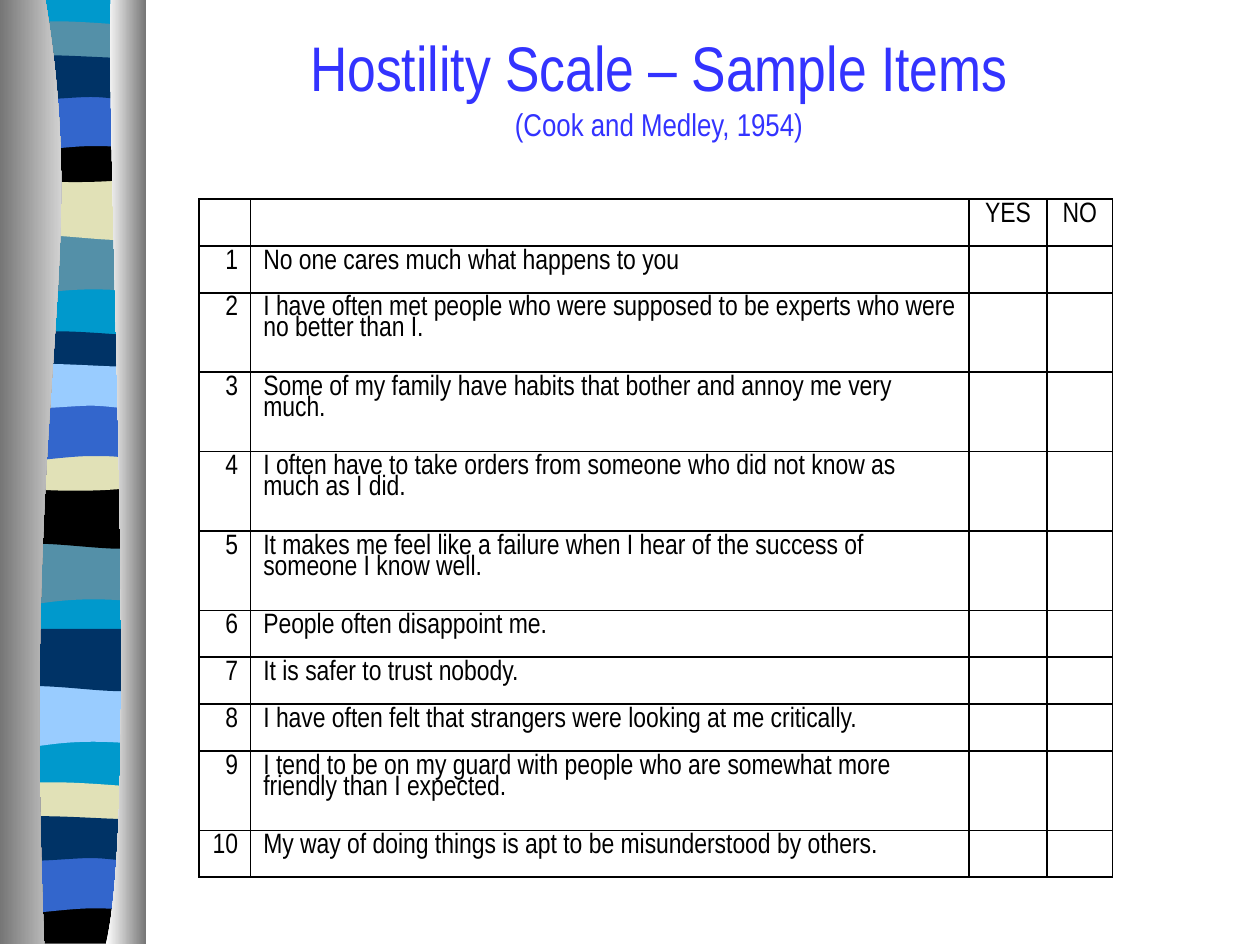
import pptx
import pptx.dml.color
import pptx.enum.text
import pptx.oxml
import pptx.oxml.ns
import pptx.util
from lxml import etree
from pptx.util import Inches

THEME = {
    "font": "Arial Narrow", "title": 36, "source": 18, "body": 16,
    "blue": "3333FF", "ink": "000000", "grey": "767676", "white": "FFFFFF",
    "aqua": "0099CC", "teal": "5490A8", "cream": "E1E1B7", "black": "000000",
    "royal": "3366CC", "navy": "003366", "sky": "99CCFF",
}

TITLE = [("Hostility Scale – Sample Items", "title"), ("(Cook and Medley, 1954)", "source")]
ITEMS = [
    "No one cares much what happens to you",
    "I have often met people who were supposed to be experts who were no better than I.",
    "Some of my family have habits that bother and annoy me very much.",
    "I often have to take orders from someone who did not know as much as I did.",
    "It makes me feel like a failure when I hear of the success of someone I know well.",
    "People often disappoint me.",
    "It is safer to trust nobody.",
    "I have often felt that strangers were looking at me critically.",
    "I tend to be on my guard with people who are somewhat more friendly than I expected.",
    "My way of doing things is apt to be misunderstood by others.",
]
ROWS = [("", "", "YES", "NO")] + [(str(n), item, "", "") for n, item in enumerate(ITEMS, 1)]
WIDTHS = [0.41, 5.7, 0.62, 0.52]
SHORT, TALL, WRAP = 0.37, 0.63, 64

LEFT, RIGHT = 0.05, 1.14
WAVES = {
    "base": [(RIGHT, 0), (RIGHT, 7.47), (LEFT, 7.47), (LEFT, 0)],
    "dip": [(RIGHT, 0), (RIGHT, .47), (.39, .39, .24, .55, LEFT, .47), (LEFT, 0)],
    "swell": [(RIGHT, 0), (RIGHT, .47), (.96, .55, .39, .41, LEFT, .47), (LEFT, 0)],
    "crest": [(RIGHT, 0), (RIGHT, .24), (.96, .29, .24, .29, LEFT, .24), (LEFT, 0),
              (.12, -.05, .29, -.04, .47, -.04), (.65, -.04, 1, -.01, RIGHT, 0)],
    "bowl": [(RIGHT, 0), (RIGHT, .32), (.96, .38, .24, .38, LEFT, .32), (LEFT, 0),
             (.72, .05, .91, 0, RIGHT, 0)],
    "foot": [(RIGHT, 0), (RIGHT, .37), (LEFT, .37), (LEFT, 0), (.72, .05, .91, 0, RIGHT, 0)],
    "arch": [(RIGHT, 0), (RIGHT, .47), (.97, .42, .9, .42, .72, .42),
             (.54, .42, .22, .47, LEFT, .47), (LEFT, 0)],
    "roll": [(RIGHT, 0), (RIGHT, .31), (1.07, .36, .9, .31, .72, .31),
             (.54, .31, .17, .36, LEFT, .31), (LEFT, 0),
             (.21, -.05, .79, 0, .97, 0), (1.15, 0, 1.1, 0, RIGHT, 0)],
}
BANDS = [
    ("base", 0, "aqua"),
    ("dip", 1.85, "teal"), ("swell", 1.41, "cream"), ("crest", 0.21, "teal"),
    ("bowl", 1.08, "black"), ("arch", 0.74, "royal"), ("roll", 0.46, "navy"),
    ("dip", 4.31, "teal"), ("swell", 3.86, "black"), ("crest", 2.67, "navy"),
    ("bowl", 3.53, "cream"), ("arch", 3.2, "royal"), ("roll", 2.91, "sky"),
    ("dip", 5.44, "sky"), ("swell", 4.99, "navy"), ("crest", 6.25, "cream"),
    ("foot", 7.12, "black"), ("arch", 6.79, "royal"), ("roll", 6.5, "navy"),
]
POSTS = [
    ([(.36, 0), (.72, 2.16, .17, 2.96, .35, 7.49), (0, 7.49), (0, 0)], ("grey", "white")),
    ([(.88, 0), (.84, 1.25, 1.11, 6.46, .84, 7.49), (1.16, 7.49), (1.16, 0)], ("white", "grey")),
]


def tint(name):
    return pptx.dml.color.RGBColor.from_string(THEME[name])


def draw(slide, parts, top=0):
    spots = [(Inches(x), Inches(y + top))
             for part in parts for x, y in zip(part[::2], part[1::2])]
    pen = slide.shapes.build_freeform(*spots[0])
    pen.add_line_segments(spots[1:], close=True)
    shape = pen.convert_to_shape()
    shape.shadow.inherit = False
    shape.line.fill.background()
    lines = iter(list(shape._element.iter(pptx.oxml.ns.qn("a:lnTo"))))
    for part in parts[1:]:
        line = next(lines)
        if len(part) == 6:
            curve = etree.Element(pptx.oxml.ns.qn("a:cubicBezTo"))
            line.addprevious(curve)
            for old in (line, next(lines), next(lines)):
                curve.append(old[0])
                old.getparent().remove(old)
    return shape


def add_side(slide):
    for wave, top, hue in BANDS:
        fill = draw(slide, WAVES[wave], top).fill
        fill.solid()
        fill.fore_color.rgb = tint(hue)
    for parts, hues in POSTS:
        fill = draw(slide, parts).fill
        fill.gradient()
        fill.gradient_angle = 0
        for stop, hue, place in zip(fill.gradient_stops, hues, (0, 1)):
            stop.color.rgb = tint(hue)
            stop.position = place


def write(para, text, size, hue, align):
    para.alignment = align
    run = para.add_run()
    run.text = text
    run.font.name = THEME["font"]
    run.font.size = pptx.util.Pt(THEME[size])
    run.font.color.rgb = tint(hue)


def add_title(slide):
    title = slide.shapes.title
    title.left, title.top, title.width, title.height = map(Inches, (1.52, 0.18, 7.42, 1))
    frame = title.text_frame
    frame.word_wrap = True
    frame.auto_size = pptx.enum.text.MSO_AUTO_SIZE.NONE
    frame.vertical_anchor = pptx.enum.text.MSO_ANCHOR.BOTTOM
    for n, (text, size) in enumerate(TITLE):
        para = frame.add_paragraph() if n else frame.paragraphs[0]
        para.space_before = pptx.util.Pt(0)
        write(para, text, size, "blue", pptx.enum.text.PP_ALIGN.CENTER)


def edge(cell, col):
    props = cell._tc.get_or_add_tcPr()
    for side in "LRTB":
        thin = (col, side) in ((0, "R"), (1, "L"))
        width = pptx.util.Pt(0.75 if thin else 1)
        props.append(pptx.oxml.parse_xml(
            f'<a:ln{side} {pptx.oxml.ns.nsdecls("a")} w="{width}"><a:solidFill>'
            f'<a:srgbClr val="{THEME["ink"]}"/></a:solidFill></a:ln{side}>'))
    cell.fill.background()


def add_grid(slide):
    highs = [TALL if len(row[1]) > WRAP else SHORT for row in ROWS]
    grid = slide.shapes.add_table(
        len(ROWS), len(WIDTHS), Inches(1.58), Inches(1.58),
        Inches(sum(WIDTHS)), Inches(sum(highs))).table
    grid.first_row = grid.horz_banding = False
    for col, width in zip(grid.columns, WIDTHS):
        col.width = Inches(width)
    align = pptx.enum.text.PP_ALIGN
    sides = (align.RIGHT, align.LEFT, align.CENTER, align.CENTER)
    for r, (row, high) in enumerate(zip(ROWS, highs)):
        grid.rows[r].height = Inches(high)
        for c, text in enumerate(row):
            cell = grid.cell(r, c)
            edge(cell, c)
            para = cell.text_frame.paragraphs[0]
            para.line_spacing = 0.8
            para.font.size = pptx.util.Pt(THEME["body"])
            if text:
                write(para, text, "body", "ink", sides[c])


def main():
    deck = pptx.Presentation()
    deck.slide_width, deck.slide_height = Inches(10), Inches(7.5)
    slide = deck.slides.add_slide(deck.slide_layouts[5])
    add_side(slide)
    add_grid(slide)
    add_title(slide)
    deck.save("out.pptx")


if __name__ == "__main__":
    main()
